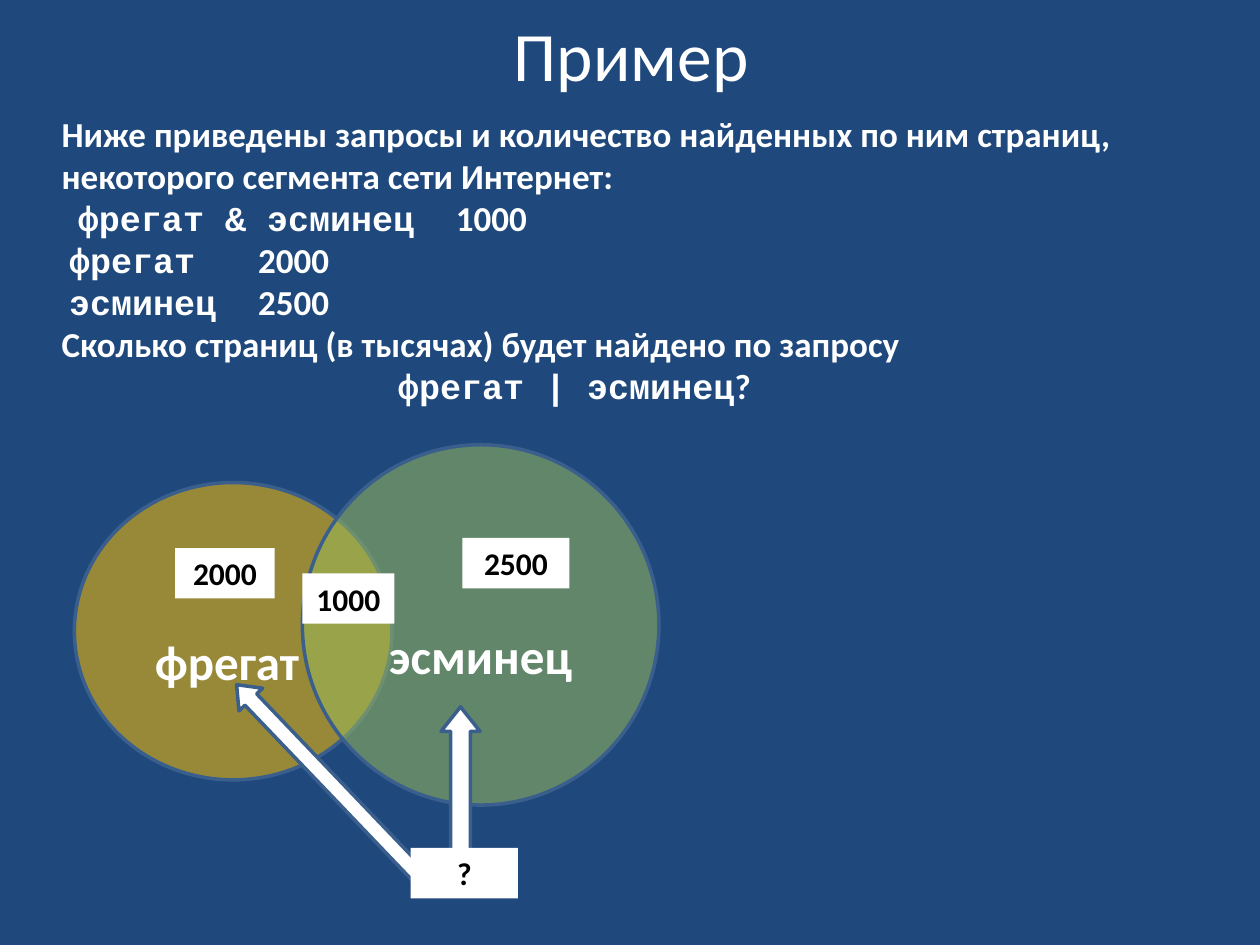
from lxml import etree
from pptx import Presentation
from pptx import util as u
from pptx.dml.color import RGBColor
from pptx.enum import shapes, text
from pptx.oxml import ns

NAVY = RGBColor(0x1F, 0x49, 0x7D)
OUTLINE = RGBColor(0x3A, 0x5F, 0x8C)
GOLD = RGBColor(0xFF, 0xC0, 0x00)
GREEN = RGBColor(0x9B, 0xBB, 0x59)
WHITE = RGBColor(0xFF, 0xFF, 0xFF)
BLACK = RGBColor(0x00, 0x00, 0x00)
SANS = "Calibri"
MONO = "Courier New"
COUNT_TAB = 4


def add_span(para, wording, font=SANS, size=20, color=WHITE, bold=True):
    span = para.add_run()
    span.text = wording
    span.font.name = font
    span.font.size = u.Pt(size)
    span.font.bold = bold
    span.font.color.rgb = color


def set_indent(para, indent):
    properties = para._p.get_or_add_pPr()
    properties.set("marL", str(u.Inches(indent)))
    properties.set("indent", "0")
    tabs = etree.SubElement(properties, ns.qn("a:tabLst"))
    etree.SubElement(tabs, ns.qn("a:tab"), pos=str(u.Inches(COUNT_TAB)), algn="l")


class VennSlide:
    def __init__(self, deck):
        self.slide = deck.slides.add_slide(deck.slide_layouts[6])
        self.slide.background.fill.solid()
        self.slide.background.fill.fore_color.rgb = NAVY

    def title(self, wording, place):
        box = self.slide.shapes.add_textbox(*map(u.Inches, place))
        frame = box.text_frame
        frame.word_wrap = True
        frame.vertical_anchor = text.MSO_ANCHOR.MIDDLE
        para = frame.paragraphs[0]
        para.alignment = text.PP_ALIGN.CENTER
        add_span(para, wording, size=39.6, bold=False)

    def body(self, lines, place):
        box = self.slide.shapes.add_textbox(*map(u.Inches, place))
        frame = box.text_frame
        frame.word_wrap = True
        for number, (indent, spans) in enumerate(lines):
            para = frame.add_paragraph() if number else frame.paragraphs[0]
            set_indent(para, indent)
            for wording, font in spans:
                add_span(para, wording, font=font)

    def shape(self, kind, place, fill, outlined=True):
        box = self.slide.shapes.add_shape(kind, *map(u.Inches, place))
        box.shadow.inherit = False
        box.fill.solid()
        box.fill.fore_color.rgb = fill
        if outlined:
            box.line.color.rgb = OUTLINE
            box.line.width = u.Pt(2)
        else:
            box.line.fill.background()
        return box

    def caption(self, box, wording, size, color, left=0.1, top=0.05):
        frame = box.text_frame
        frame.word_wrap = True
        frame.vertical_anchor = text.MSO_ANCHOR.MIDDLE
        frame.margin_left = u.Inches(left)
        frame.margin_top = u.Inches(top)
        para = frame.paragraphs[0]
        para.alignment = text.PP_ALIGN.CENTER
        add_span(para, wording, size=size, color=color)

    def circle(self, wording, place, fill, left=0.1):
        box = self.shape(shapes.MSO_SHAPE.OVAL, place, fill)
        color = box.fill._xPr.find(ns.qn("a:solidFill"))[0]
        etree.SubElement(color, ns.qn("a:alpha"), val="54000")
        self.caption(box, wording, 28, WHITE, left=left, top=0.52)

    def label(self, wording, place):
        box = self.shape(shapes.MSO_SHAPE.RECTANGLE, place, WHITE, outlined=False)
        self.caption(box, wording, 18, BLACK)

    def arrow(self, place, rotation=0):
        box = self.shape(shapes.MSO_SHAPE.UP_ARROW, place, WHITE)
        box.adjustments[0] = 0.5
        box.adjustments[1] = 0.63
        box.rotation = rotation


def main():
    deck = Presentation()
    deck.slide_width = u.Inches(10)
    deck.slide_height = u.Inches(7.5)
    venn = VennSlide(deck)
    venn.title("Пример", (0.51, 0.13, 9, 0.59))
    venn.body([
        (0, [("Ниже приведены запросы и количество найденных по ним страниц, "
              "некоторого сегмента сети Интернет:", SANS)]),
        (0.13, [("фрегат & эсминец", MONO), ("\t1000", SANS)]),
        (0.06, [("фрегат", MONO), ("\t2000", SANS)]),
        (0.06, [("эсминец", MONO), ("\t2500", SANS)]),
        (0, [("Сколько страниц (в тысячах) будет найдено по запросу", SANS)]),
        (2.67, [("фрегат | эсминец", MONO), ("?", SANS)]),
    ], (0.39, 0.84, 9.49, 2.46))
    venn.circle("фрегат", (0.59, 3.83, 2.52, 2.36), GOLD, left=0)
    venn.circle("эсминец", (2.4, 3.53, 2.83, 2.86), GREEN)
    for wording, place in (
        ("1000", (2.4, 4.55, 0.73, 0.4)),
        ("2000", (1.39, 4.35, 0.79, 0.4)),
        ("2500", (3.67, 4.27, 0.85, 0.4)),
    ):
        venn.label(wording, place)
    venn.arrow((2.48, 5.14, 0.26, 2.12), rotation=316.3)
    venn.arrow((3.5, 5.61, 0.31, 1.15))
    venn.label("?", (3.26, 6.73, 0.85, 0.4))
    deck.save("out.pptx")


if __name__ == "__main__":
    main()
